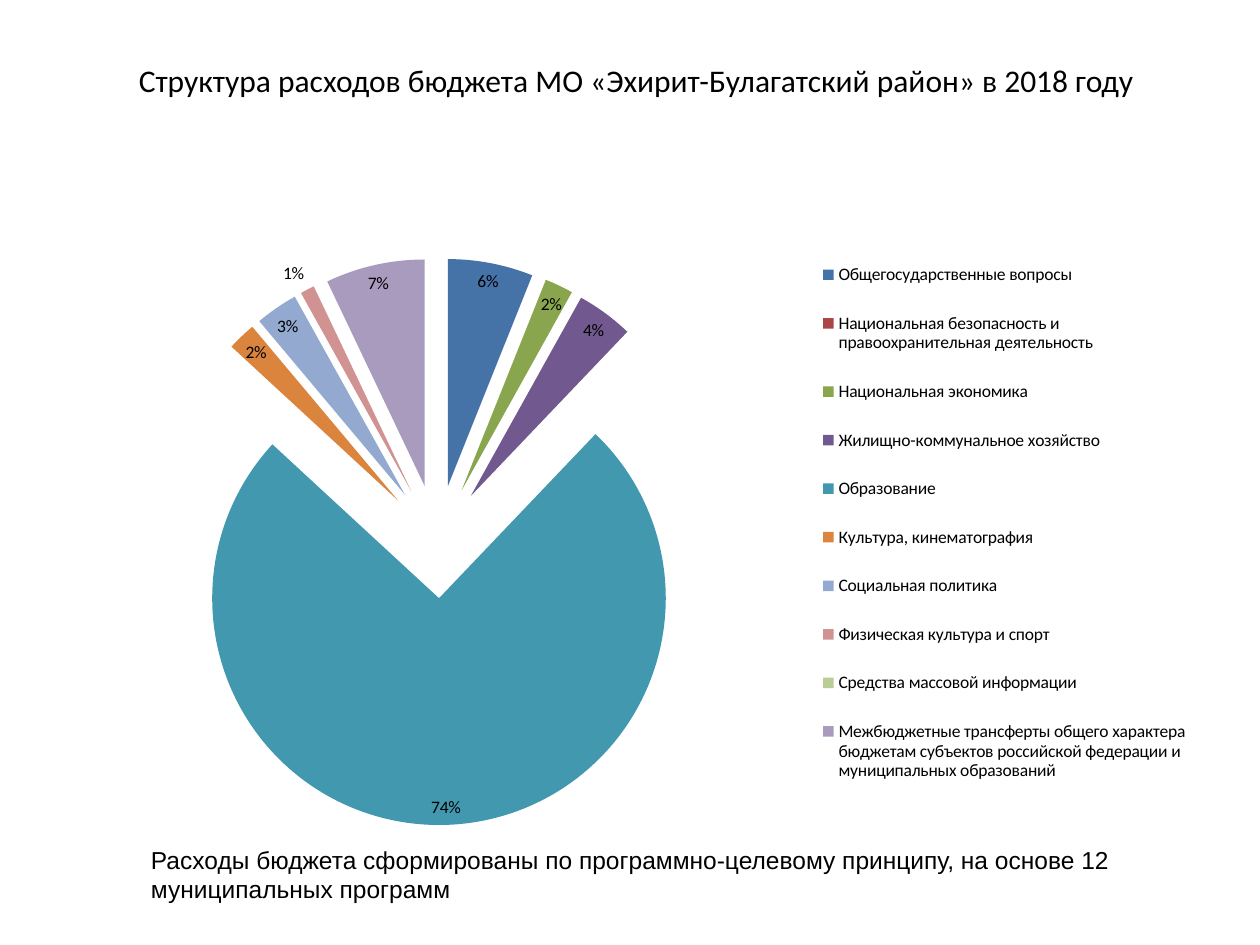
from lxml import etree
from pptx import Presentation
from pptx.chart.data import CategoryChartData
from pptx.dml.color import RGBColor
from pptx.enum.chart import XL_CHART_TYPE, XL_LABEL_POSITION, XL_LEGEND_POSITION
from pptx.enum.text import MSO_ANCHOR, PP_ALIGN
from pptx.oxml.ns import qn
from pptx.util import Inches, Pt

PIE = XL_CHART_TYPE.PIE_EXPLODED
BEST_FIT = XL_LABEL_POSITION.BEST_FIT
RIGHT = XL_LEGEND_POSITION.RIGHT
MIDDLE = MSO_ANCHOR.MIDDLE
CENTER, LEFT = PP_ALIGN.CENTER, PP_ALIGN.LEFT

WIDTH, HEIGHT = 10, 7.5
BLACK = "000000"
EXPLOSION = 25

# Category, share in percent, slice colour
EXPENSES = [
    ("Общегосударственные вопросы", 6, "4572A7"),
    ("Национальная безопасность и правоохранительная деятельность", 0, "AA4643"),
    ("Национальная экономика", 2, "89A54E"),
    ("Жилищно-коммунальное хозяйство", 4, "71588F"),
    ("Образование", 74, "4198AF"),
    ("Культура, кинематография", 2, "DB843D"),
    ("Социальная политика", 3, "93A9CF"),
    ("Физическая культура и спорт", 1, "D19392"),
    ("Средства массовой информации", 0, "B9CD96"),
    ("Межбюджетные трансферты общего характера бюджетам субъектов "
     "российской федерации и муниципальных образований", 7, "A99BBD"),
]


def color(value):
    return RGBColor.from_string(value)


def share_box(left, top, width, height):
    """Turn shares of the slide into lengths."""
    return [Inches(share * side) for share, side in
            zip((left, top, width, height), (WIDTH, HEIGHT) * 2)]


def format_font(font, name, size):
    for attribute, value in {"name": name, "size": Pt(size), "bold": False}.items():
        setattr(font, attribute, value)
    font.color.rgb = color(BLACK)


def fill_text(shape, text, alignment, name, size):
    frame = shape.text_frame
    frame.word_wrap = True
    frame.vertical_anchor = MIDDLE
    paragraph = frame.paragraphs[0]
    paragraph.alignment = alignment
    run = paragraph.add_run()
    run.text = text
    format_font(run.font, name, size)


def add_title(slide, box):
    title = slide.shapes.title
    title.left, title.top, title.width, title.height = box
    fill_text(title, "Структура расходов бюджета МО «Эхирит-Булагатский район» в 2018 году",
              CENTER, "Calibri", 18)


def chart_layout(inner, **shares):
    """Manual layout of a chart part, in shares of the chart."""
    layout = etree.Element(qn("c:layout"))
    manual = etree.SubElement(layout, qn("c:manualLayout"))
    settings = {"layoutTarget": "inner"} if inner else {}
    settings.update(xMode="edge", yMode="edge", **shares)
    for tag, value in settings.items():
        etree.SubElement(manual, qn(f"c:{tag}")).set("val", str(value))
    return layout


def add_expense_chart(slide, box):
    data = CategoryChartData(number_format='0"%"')
    data.categories = [name for name, _, _ in EXPENSES]
    data.add_series("Series 1", [share for _, share, _ in EXPENSES])
    chart = slide.shapes.add_chart(PIE, *box, data).chart
    chart.has_title = False
    format_font(chart.font, "Calibri", 10)

    # Slices
    plot = chart.plots[0]
    plot.vary_by_categories = True
    series = plot.series[0]
    for index, (_, _, fill) in enumerate(EXPENSES):
        slice_fill = series.points[index].format.fill
        slice_fill.solid()
        slice_fill.fore_color.rgb = color(fill)
    for old in series._element.findall(qn("c:explosion")):
        series._element.remove(old)
    explosion = etree.Element(qn("c:explosion"))
    explosion.set("val", str(EXPLOSION))
    series._element.find(qn("c:dPt")).addprevious(explosion)

    # Labels
    plot.has_data_labels = True
    labels = plot.data_labels
    for attribute, value in {"show_value": True, "show_percentage": False,
                             "number_format": '0"%"', "number_format_is_linked": False,
                             "position": BEST_FIT}.items():
        setattr(labels, attribute, value)
    format_font(labels.font, "Calibri", 10)

    # Legend and places of the parts
    chart.has_legend = True
    legend = chart.legend
    legend.position = RIGHT
    legend.include_in_layout = False
    format_font(legend.font, "Calibri", 10)
    plot_area = chart._chartSpace.chart.plotArea
    for part in (plot_area, legend._element):
        for old in part.findall(qn("c:layout")):
            part.remove(old)
    plot_area.insert(0, chart_layout(True, x=0.08, y=0.06, w=0.5, h=0.92))
    legend._element.find(qn("c:legendPos")).addnext(
        chart_layout(False, x=0.67, y=0.03, w=0.32, h=0.92))


def add_note(slide, box):
    note = slide.shapes.add_textbox(*box)
    fill_text(note, "Расходы бюджета сформированы по программно-целевому принципу, "
                    "на основе 12 муниципальных программ", LEFT, "Arial", 14)


def main():
    presentation = Presentation()
    presentation.slide_width, presentation.slide_height = Inches(WIDTH), Inches(HEIGHT)
    slide = presentation.slides.add_slide(presentation.slide_layouts[5])
    add_title(slide, share_box(0.06, 0.04, 0.89, 0.09))
    add_expense_chart(slide, share_box(0.05, 0.23, 0.9, 0.66))
    add_note(slide, share_box(0.11, 0.89, 0.84, 0.07))
    presentation.save("out.pptx")


if __name__ == "__main__":
    main()
